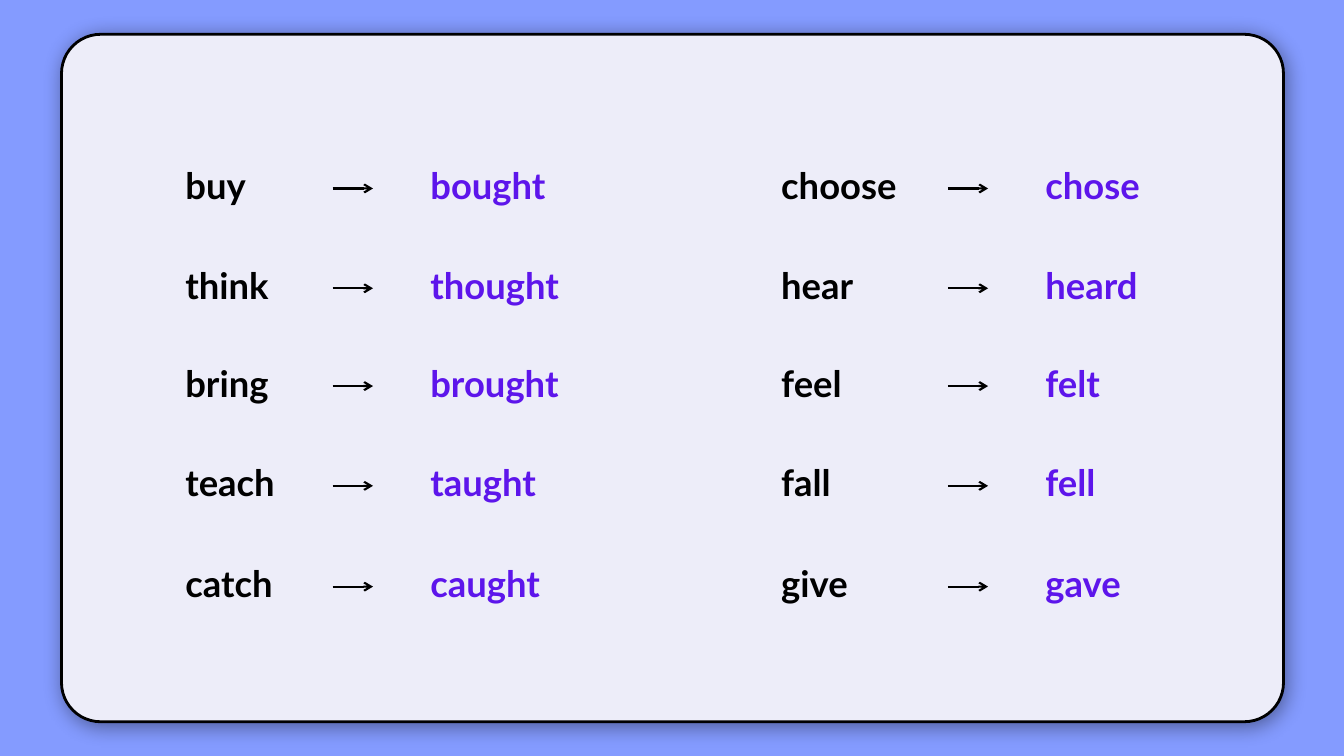
from lxml import etree
from pptx import Presentation
from pptx.dml.color import RGBColor
from pptx.enum.shapes import MSO_CONNECTOR, MSO_SHAPE
from pptx.enum.text import MSO_AUTO_SIZE
from pptx.oxml import parse_xml
from pptx.oxml.ns import nsdecls, qn
from pptx.util import Inches, Pt

STRAIGHT = MSO_CONNECTOR.STRAIGHT
ROUNDED = MSO_SHAPE.ROUNDED_RECTANGLE
FIT_SHAPE = MSO_AUTO_SIZE.SHAPE_TO_FIT_TEXT

BLUE = RGBColor(0x84, 0x9B, 0xFF)
PALE = RGBColor(0xED, 0xED, 0xF9)
BLACK = RGBColor(0x00, 0x00, 0x00)
VIOLET = RGBColor(0x5D, 0x15, 0xEB)

FONT = "Lato"
ROW_TOPS = (1.57, 2.56, 3.53, 4.52, 5.52)
ROW_HEIGHT = 0.54
ARROW_DROP = 0.3
ARROW_LENGTH = 0.4

LEFT_VERBS = (
    ("buy", 0.88, "bought", 1.49),
    ("think", 1.13, "thought", 1.63),
    ("bring", 1.14, "brought", 1.63),
    ("teach", 1.23, "taught", 1.41),
    ("catch", 1.23, "caught", 1.47),
)
RIGHT_VERBS = (
    ("choose", 1.5, "chose", 1.27),
    ("hear", 1.03, "heard", 1.25),
    ("feel", 0.85, "felt", 0.79),
    ("fall", 0.76, "fell", 0.74),
    ("give", 0.94, "gave", 1.07),
)


def add_card(page):
    card = page.shapes.add_shape(
        ROUNDED, Inches(0.61), Inches(0.34), Inches(12.12), Inches(6.82)
    )
    card.adjustments[0] = 0.057
    card.fill.solid()
    card.fill.fore_color.rgb = PALE
    card.line.color.rgb = BLACK
    card.line.width = Pt(2)
    card.shadow.inherit = False
    effects = card._element.spPr.find(qn("a:effectLst"))
    effects.append(parse_xml(
        f'<a:outerShdw {nsdecls("a")} blurRad="{Pt(15)}" dist="{Pt(3)}" '
        f'dir="{45 * 60000}" algn="tl" rotWithShape="0">'
        f'<a:srgbClr val="{BLACK}"><a:alpha val="40000"/></a:srgbClr>'
        '</a:outerShdw>'
    ))


def add_text(page, text, left, top, width, color=BLACK, size=26, bold=True):
    box = page.shapes.add_textbox(
        Inches(left), Inches(top), Inches(width), Inches(ROW_HEIGHT)
    )
    frame = box.text_frame
    frame.word_wrap = False
    frame.auto_size = FIT_SHAPE
    span = frame.paragraphs[0].add_run()
    span.text = text
    span.font.name = FONT
    span.font.size = Pt(size)
    span.font.bold = bold
    span.font.color.rgb = color


def add_arrow(page, left, top):
    arrow = page.shapes.add_connector(
        STRAIGHT, Inches(left), Inches(top), Inches(left + ARROW_LENGTH), Inches(top)
    )
    arrow.line.color.rgb = BLACK
    arrow.line.width = Pt(1.5)
    etree.SubElement(arrow.line._get_or_add_ln(), qn("a:tailEnd"), type="arrow")
    etree.SubElement(arrow._element.spPr, qn("a:effectLst"))


def add_verbs(page, verbs, base_left, arrow_left, past_left):
    for top, (base, base_width, past, past_width) in zip(ROW_TOPS, verbs):
        add_text(page, base, base_left, top, base_width)
        add_text(page, past, past_left, top, past_width, color=VIOLET)
        add_arrow(page, arrow_left, top + ARROW_DROP)


def main():
    deck = Presentation()
    deck.slide_width = Inches(13.33)
    deck.slide_height = Inches(7.5)
    page = deck.slides.add_slide(deck.slide_layouts[6])
    page.background.fill.solid()
    page.background.fill.fore_color.rgb = BLUE
    add_card(page)
    add_verbs(page, LEFT_VERBS, base_left=1.74, arrow_left=3.3, past_left=4.17)
    add_verbs(page, RIGHT_VERBS, base_left=7.65, arrow_left=9.4, past_left=10.27)
    deck.save("out.pptx")


if __name__ == "__main__":
    main()
